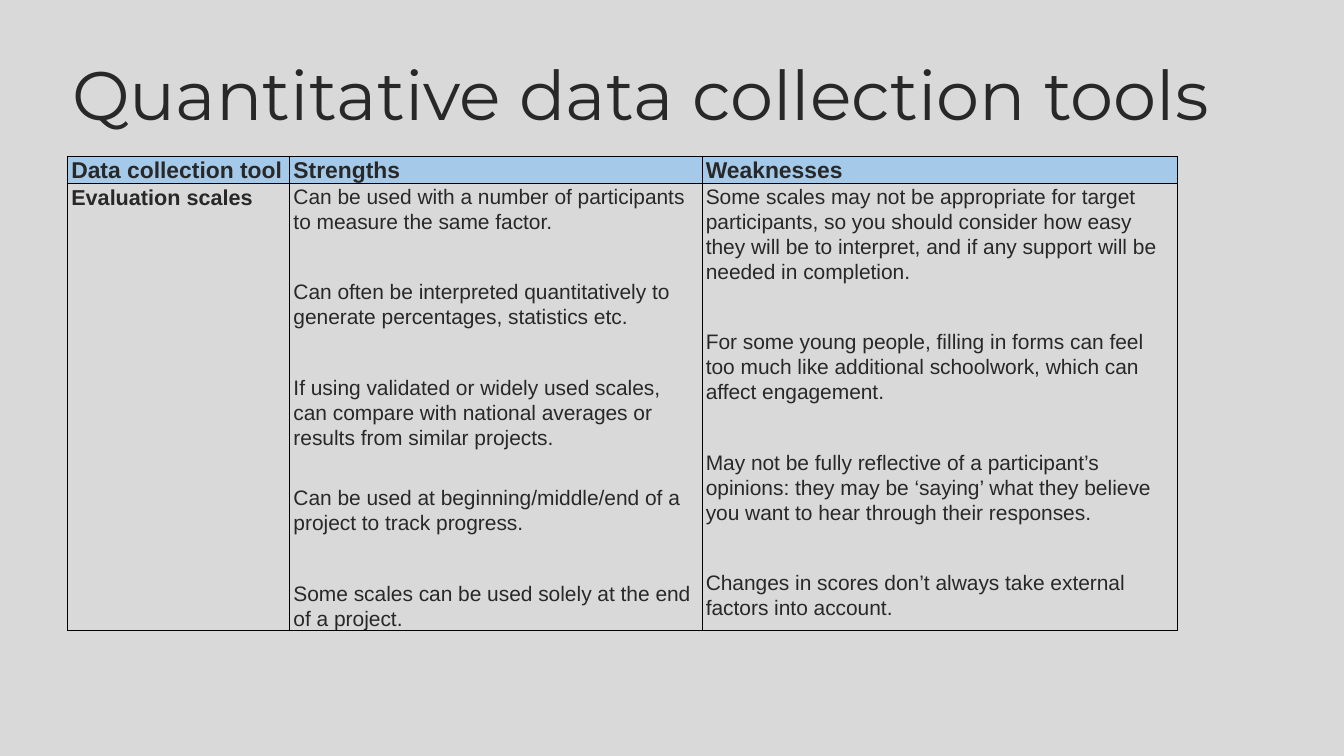
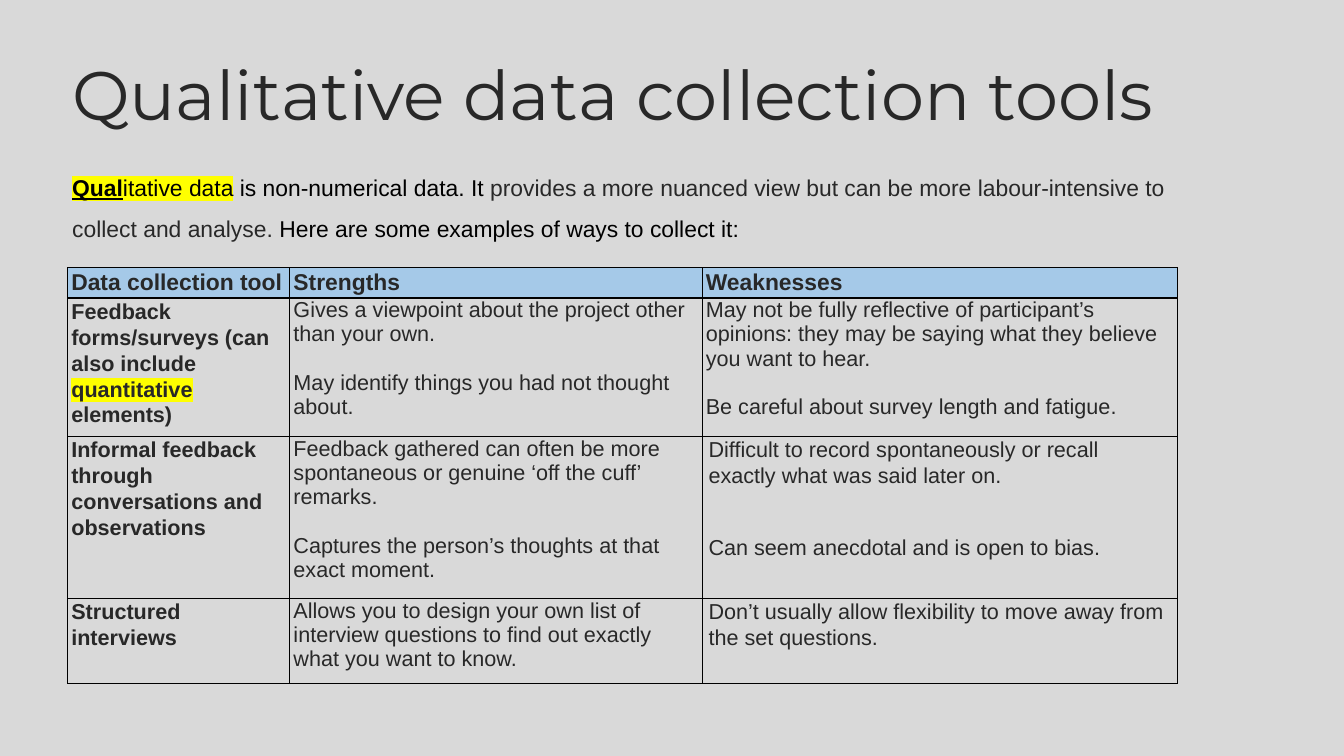
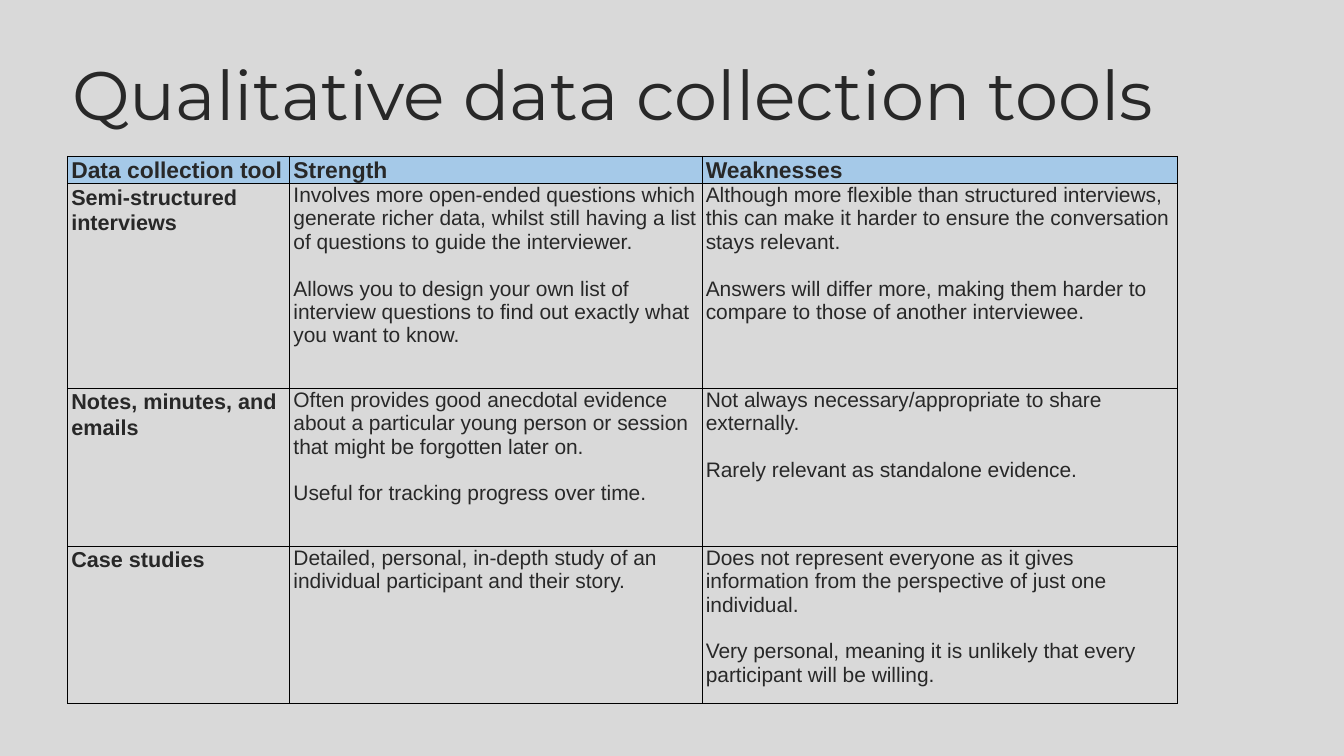
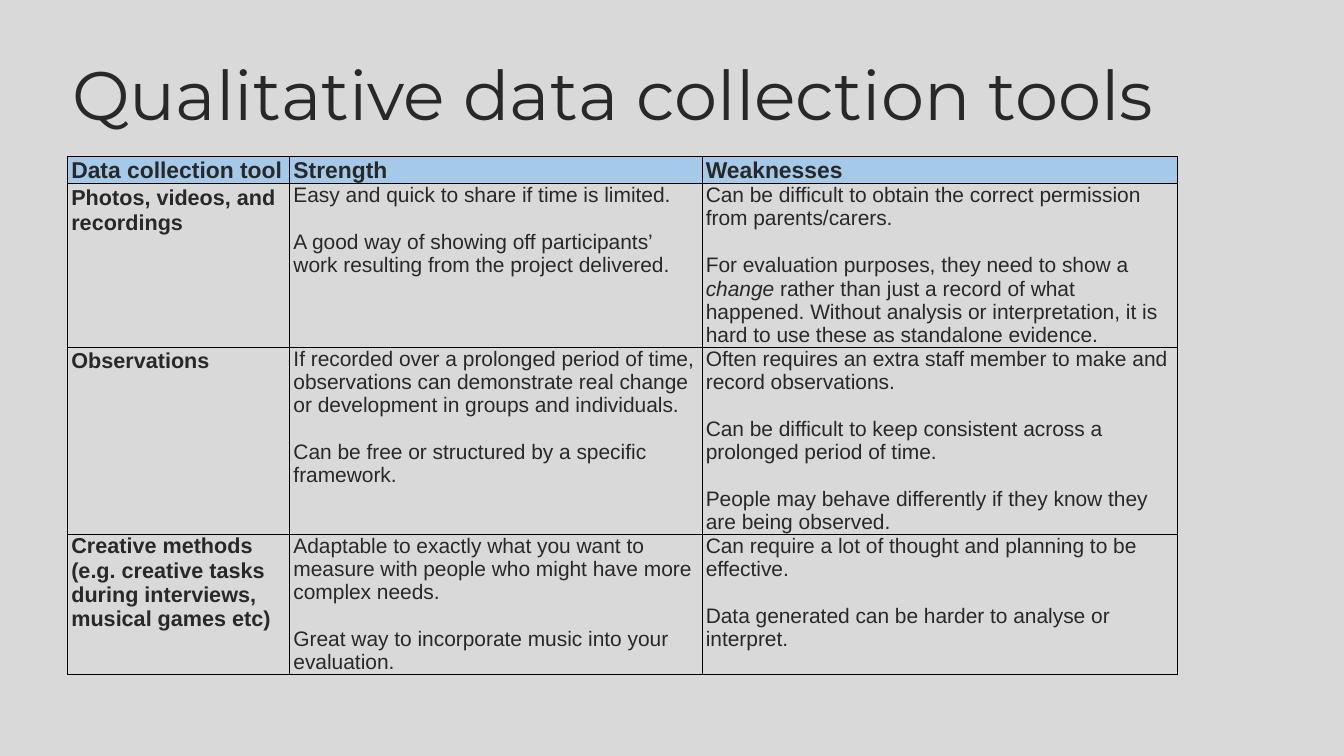
"""Build four slides that compare data collection tools in tables."""
from dataclasses import dataclass
from typing import Optional, Union

import lxml.etree
import pptx
import pptx.dml.color
import pptx.enum.text
import pptx.oxml.ns
import pptx.slide
import pptx.table
import pptx.text.text
import pptx.util

Inches = pptx.util.Inches
Pt = pptx.util.Pt
RGBColor = pptx.dml.color.RGBColor
qn = pptx.oxml.ns.qn

BACKGROUND = RGBColor(0xD9, 0xD9, 0xD9)
INK = RGBColor(0x28, 0x28, 0x28)
BLACK = RGBColor(0, 0, 0)
HEADER_BLUE = RGBColor(0xA5, 0xC9, 0xE8)
YELLOW = RGBColor(0xFF, 0xFF, 0)

TITLE_FONT = "Montserrat"
BODY_FONT = "Arial"
LEFT = 0.74
INSET = 0.05
COLUMN_WIDTHS = (2.43, 4.51, 5.2)
PLAIN_TABLE_STYLE = "{2D5ABB26-0587-4C30-8999-92F81FD0307C}"


@dataclass(frozen=True)
class TextStyle:
    size: float
    bold: bool = False
    line_spacing: float = 1.0
    gap: float = 0
    inset: float = 0.04


@dataclass(frozen=True)
class Span:
    text: str
    bold: Optional[bool] = None
    italic: bool = False
    underline: bool = False
    highlighted: bool = False
    colour: RGBColor = INK


@dataclass(frozen=True)
class Paragraph:
    spans: tuple[Span, ...]
    gap: Optional[float] = None


Entry = Union[str, Paragraph]


@dataclass(frozen=True)
class CellText:
    style: TextStyle
    entries: tuple[Entry, ...]


@dataclass(frozen=True)
class ToolRow:
    height: float
    tool: CellText
    strengths: CellText
    weaknesses: CellText


@dataclass(frozen=True)
class ToolSlide:
    title: str
    strengths_heading: str
    rows: tuple[ToolRow, ...]
    table_top: float = 1.71
    header_height: float = 0.3
    intro: Optional[Paragraph] = None


HEADER = TextStyle(18, bold=True, line_spacing=1.07)
LABEL = TextStyle(17, bold=True, line_spacing=1.07)
COMPACT_LABEL = TextStyle(17, bold=True)
LOOSE = TextStyle(16.5, line_spacing=1.07, gap=36)
LOOSE_INDENTED = TextStyle(17, line_spacing=1.07, gap=36, inset=0.07)
MEDIUM = TextStyle(17, gap=19)
TIGHT = TextStyle(16.5, gap=18.5)
INTRO = TextStyle(18, line_spacing=1.5)


def text(style: TextStyle, *entries: Entry) -> CellText:
    return CellText(style, entries)


QUALITATIVE_TITLE = "Qualitative data collection tools"

SLIDES = (
    ToolSlide("Quantitative data collection tools", "Strengths", (
        ToolRow(
            4.87,
            text(LABEL, "Evaluation scales"),
            text(
                LOOSE,
                "Can be used with a number of participants to measure the same factor.",
                "Can often be interpreted quantitatively to generate percentages, statistics etc.",
                "If using validated or widely used scales, can compare with national averages "
                "or results from similar projects.",
                Paragraph((Span("Can be used at beginning/middle/end of a project to track progress."),), gap=28),
                "Some scales can be used solely at the end of a project.",
            ),
            text(
                LOOSE,
                "Some scales may not be appropriate for target participants, so you should consider "
                "how easy they will be to interpret, and if any support will be needed in completion.",
                "For some young people, filling in forms can feel too much like additional schoolwork, "
                "which can affect engagement.",
                "May not be fully reflective of a participant’s opinions: they may be ‘saying’ what "
                "they believe you want to hear through their responses.",
                "Changes in scores don’t always take external factors into account.",
            ),
        ),
    )),
    ToolSlide(
        QUALITATIVE_TITLE, "Strengths", (
            ToolRow(
                1.51,
                text(LABEL, Paragraph((
                    Span("Feedback forms/surveys (can also include "),
                    Span("quantitative", highlighted=True),
                    Span(" elements)"),
                ))),
                text(
                    MEDIUM,
                    "Gives a viewpoint about the project other than your own.",
                    "May identify things you had not thought about.",
                ),
                text(
                    MEDIUM,
                    "May not be fully reflective of participant’s opinions: they may be saying what "
                    "they believe you want to hear.",
                    "Be careful about survey length and fatigue.",
                ),
            ),
            ToolRow(
                1.77,
                text(LABEL, "Informal feedback through conversations and observations"),
                text(
                    MEDIUM,
                    "Feedback gathered can often be more spontaneous or genuine ‘off the cuff’ remarks.",
                    "Captures the person’s thoughts at that exact moment.",
                ),
                text(
                    LOOSE_INDENTED,
                    "Difficult to record spontaneously or recall exactly what was said later on.",
                    "Can seem anecdotal and is open to bias.",
                ),
            ),
            ToolRow(
                0.93,
                text(LABEL, "Structured interviews"),
                text(
                    MEDIUM,
                    "Allows you to design your own list of interview questions to find out exactly "
                    "what you want to know.",
                ),
                text(
                    LOOSE_INDENTED,
                    "Don’t usually allow flexibility to move away from the set questions.",
                ),
            ),
        ),
        table_top=2.93,
        header_height=0.33,
        intro=Paragraph((
            Span("Qual", bold=True, underline=True, highlighted=True, colour=BLACK),
            Span("itative data", highlighted=True, colour=BLACK),
            Span(" is non-numerical data. It ", colour=BLACK),
            Span("provides a more nuanced view but can be more labour-intensive to collect and analyse. "),
            Span("Here are some examples of ways to collect it:", colour=BLACK),
        )),
    ),
    ToolSlide(QUALITATIVE_TITLE, "Strength", (
        ToolRow(
            2.24,
            text(LABEL, "Semi-structured interviews"),
            text(
                TIGHT,
                "Involves more open-ended questions which generate richer data, whilst still having "
                "a list of questions to guide the interviewer.",
                "Allows you to design your own list of interview questions to find out exactly "
                "what you want to know.",
            ),
            text(
                TIGHT,
                "Although more flexible than structured interviews, this can make it harder to "
                "ensure the conversation stays relevant.",
                "Answers will differ more, making them harder to compare to those of another interviewee.",
            ),
        ),
        ToolRow(
            1.73,
            text(LABEL, "Notes, minutes, and emails"),
            text(
                TIGHT,
                "Often provides good anecdotal evidence about a particular young person or session "
                "that might be forgotten later on.",
                "Useful for tracking progress over time.",
            ),
            text(
                TIGHT,
                "Not always necessary/appropriate to share externally.",
                "Rarely relevant as standalone evidence.",
            ),
        ),
        ToolRow(
            1.72,
            text(LABEL, "Case studies"),
            text(TIGHT, "Detailed, personal, in-depth study of an individual participant and their story."),
            text(
                TIGHT,
                "Does not represent everyone as it gives information from the perspective of just "
                "one individual.",
                "Very personal, meaning it is unlikely that every participant will be willing.",
            ),
        ),
    )),
    ToolSlide(QUALITATIVE_TITLE, "Strength", (
        ToolRow(
            1.78,
            text(LABEL, "Photos, videos, and recordings"),
            text(
                TIGHT,
                "Easy and quick to share if time is limited.",
                "A good way of showing off participants’ work resulting from the project delivered.",
            ),
            text(
                TIGHT,
                "Can be difficult to obtain the correct permission from parents/carers.",
                Paragraph((
                    Span("For evaluation purposes, they need to show a "),
                    Span("change", italic=True),
                    Span(" rather than just a record of what happened. Without analysis or "
                         "interpretation, it is hard to use these as standalone evidence."),
                )),
            ),
        ),
        ToolRow(
            2.04,
            text(LABEL, "Observations"),
            text(
                TIGHT,
                "If recorded over a prolonged period of time, observations can demonstrate real "
                "change or development in groups and individuals.",
                "Can be free or structured by a specific framework.",
            ),
            text(
                TIGHT,
                "Often requires an extra staff member to make and record observations.",
                "Can be difficult to keep consistent across a prolonged period of time.",
                "People may behave differently if they know they are being observed.",
            ),
        ),
        ToolRow(
            1.53,
            text(
                COMPACT_LABEL,
                "Creative methods",
                "(e.g. creative tasks during interviews, musical games etc)",
            ),
            text(
                TIGHT,
                "Adaptable to exactly what you want to measure with people who might have more complex needs.",
                "Great way to incorporate music into your evaluation.",
            ),
            text(
                TIGHT,
                "Can require a lot of thought and planning to be effective.",
                "Data generated can be harder to analyse or interpret.",
            ),
        ),
    )),
)


def highlight(run: pptx.text.text._Run) -> None:
    properties = run.font._element
    marker = lxml.etree.SubElement(properties, qn("a:highlight"))
    lxml.etree.SubElement(marker, qn("a:srgbClr"), val=str(YELLOW))
    properties.find(qn("a:solidFill")).addnext(marker)


def write(frame: pptx.text.text.TextFrame, content: CellText) -> None:
    frame.word_wrap = True
    for index, entry in enumerate(content.entries):
        line = frame.paragraphs[0] if index == 0 else frame.add_paragraph()
        item = Paragraph((Span(entry),)) if isinstance(entry, str) else entry
        line.line_spacing = content.style.line_spacing
        if index:
            line.space_before = Pt(content.style.gap if item.gap is None else item.gap)
        for span in item.spans:
            run = line.add_run()
            run.text = span.text
            run.font.name = BODY_FONT
            run.font.size = Pt(content.style.size)
            run.font.bold = content.style.bold if span.bold is None else span.bold
            run.font.italic = span.italic
            run.font.underline = span.underline
            run.font.color.rgb = span.colour
            if span.highlighted:
                highlight(run)


def add_borders(cell: pptx.table._Cell) -> None:
    properties = cell._tc.get_or_add_tcPr()
    for side in ("lnL", "lnR", "lnT", "lnB"):
        border = lxml.etree.SubElement(properties, qn(f"a:{side}"), w=str(Pt(1)))
        fill = lxml.etree.SubElement(border, qn("a:solidFill"))
        lxml.etree.SubElement(fill, qn("a:srgbClr"), val=str(BLACK))


def fill_cell(cell: pptx.table._Cell, content: CellText, colour: Optional[RGBColor] = None) -> None:
    cell.margin_left = cell.margin_right = Inches(content.style.inset)
    cell.margin_top = cell.margin_bottom = 0
    add_borders(cell)
    if colour is None:
        cell.fill.background()
    else:
        cell.fill.solid()
        cell.fill.fore_color.rgb = colour
    write(cell.text_frame, content)


def set_insets(frame: pptx.text.text.TextFrame) -> None:
    frame.margin_left = frame.margin_right = Inches(INSET)
    frame.margin_top = frame.margin_bottom = Inches(INSET)


def add_title(slide: pptx.slide.Slide, wording: str) -> None:
    title = slide.shapes.title
    title.left, title.top = Inches(LEFT), Inches(0.33)
    title.width, title.height = Inches(13.23), Inches(1.38)
    frame = title.text_frame
    frame.text = wording
    frame.word_wrap = True
    frame.auto_size = pptx.enum.text.MSO_AUTO_SIZE.NONE
    frame.vertical_anchor = pptx.enum.text.MSO_ANCHOR.MIDDLE
    set_insets(frame)
    line = frame.paragraphs[0]
    line.alignment = pptx.enum.text.PP_ALIGN.LEFT
    font = line.runs[0].font
    font.name = TITLE_FONT
    font.size = Pt(54)
    font.color.rgb = INK


def add_intro(slide: pptx.slide.Slide, intro: Paragraph) -> None:
    box = slide.shapes.add_textbox(Inches(LEFT), Inches(1.7), Inches(12.33), Inches(1.01))
    set_insets(box.text_frame)
    write(box.text_frame, text(INTRO, intro))


def add_tool_table(slide: pptx.slide.Slide, content: ToolSlide) -> None:
    heights = (content.header_height, *(row.height for row in content.rows))
    frame = slide.shapes.add_table(
        len(heights), len(COLUMN_WIDTHS), Inches(LEFT), Inches(content.table_top),
        Inches(sum(COLUMN_WIDTHS)), Inches(sum(heights)),
    )
    table = frame.table
    table.horz_banding = False
    table._tbl.tblPr.find(qn("a:tableStyleId")).text = PLAIN_TABLE_STYLE
    for column, width in zip(table.columns, COLUMN_WIDTHS):
        column.width = Inches(width)
    for table_row, height in zip(table.rows, heights):
        table_row.height = Inches(height)
    headings = ("Data collection tool", content.strengths_heading, "Weaknesses")
    for cell, heading in zip(table.rows[0].cells, headings):
        fill_cell(cell, text(HEADER, heading), HEADER_BLUE)
    for row_number, row in enumerate(content.rows, start=1):
        for cell, note in zip(table.rows[row_number].cells, (row.tool, row.strengths, row.weaknesses)):
            fill_cell(cell, note)


def main() -> None:
    presentation = pptx.Presentation()
    presentation.slide_width = Inches(14.7)
    presentation.slide_height = Inches(8.27)
    background = presentation.slide_master.background.fill
    background.solid()
    background.fore_color.rgb = BACKGROUND
    title_only = presentation.slide_layouts.get_by_name("Title Only")
    for content in SLIDES:
        slide = presentation.slides.add_slide(title_only)
        add_title(slide, content.title)
        if content.intro:
            add_intro(slide, content.intro)
        add_tool_table(slide, content)
    presentation.save("out.pptx")


if __name__ == "__main__":
    main()
